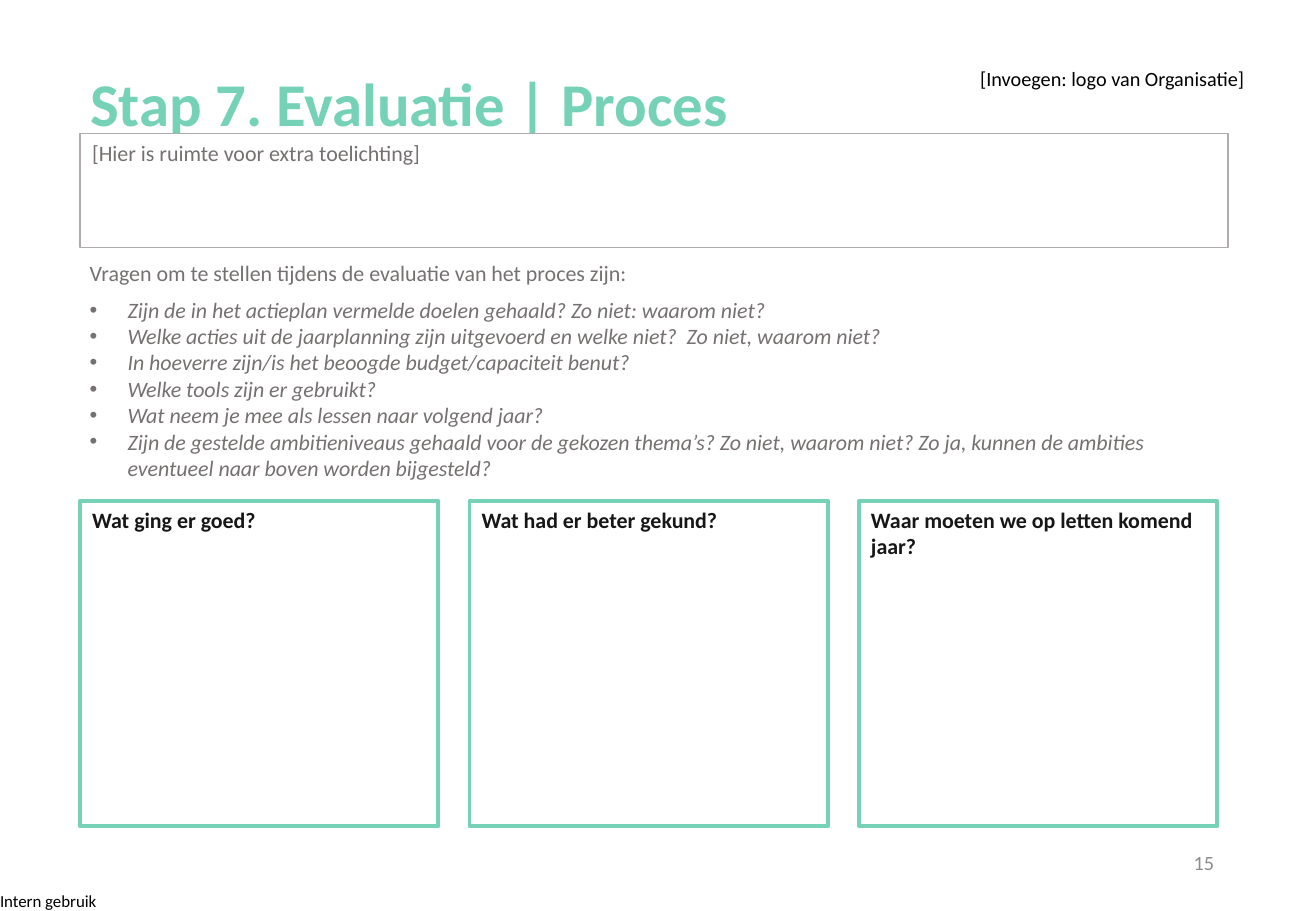
"""Build the process evaluation slide."""
import dataclasses

import lxml.etree
import pptx
import pptx.dml.color
import pptx.enum.shapes
import pptx.enum.text
import pptx.util

Pt = pptx.util.Pt
Align = pptx.enum.text.PP_ALIGN
Anchor = pptx.enum.text.MSO_ANCHOR


@dataclasses.dataclass(frozen=True)
class Theme:
    """Colours, font and type sizes of the slide."""
    font: str = "Calibri"
    mint: str = "76D2B6"
    ink: str = "181717"
    grey: str = "767171"
    rule: str = "AFABAB"
    page_grey: str = "8C8C8C"
    black: str = "000000"
    white: str = "FFFFFF"
    title: float = 36
    body: float = 13
    small: float = 12
    footer: float = 10


THEME = Theme()
QUESTIONS = [
    "Zijn de in het actieplan vermelde doelen gehaald? Zo niet: waarom niet?",
    "Welke acties uit de jaarplanning zijn uitgevoerd en welke niet?  Zo niet, waarom niet?",
    "In hoeverre zijn/is het beoogde budget/capaciteit benut?",
    "Welke tools zijn er gebruikt?",
    "Wat neem je mee als lessen naar volgend jaar?",
    "Zijn de gestelde ambitieniveaus gehaald voor de gekozen thema’s? Zo niet, waarom niet? "
    "Zo ja, kunnen de ambities eventueel naar boven worden bijgesteld?",
]
REFLECTIONS = [
    "Wat ging er goed?",
    "Wat had er beter gekund?",
    "Waar moeten we op letten komend jaar?",
]


def apply(target, formats):
    """Set every attribute in formats on target."""
    for name, value in formats.items():
        setattr(target, name, value)


def rgb(colour):
    """Return the colour object for a hex value."""
    return pptx.dml.color.RGBColor.from_string(colour)


def write(paragraph, words, size, colour, bold=False, italic=False, **formats):
    """Write one run in a paragraph and format both."""
    apply(paragraph, {"alignment": Align.LEFT, **formats})
    run = paragraph.add_run()
    run.text = words
    apply(run.font, {"name": THEME.font, "size": Pt(size), "bold": bold, "italic": italic})
    run.font.color.rgb = rgb(colour)


def add_label(slide, box, **frame_formats):
    """Add a text box and return its text frame."""
    frame = slide.shapes.add_textbox(*map(Pt, box)).text_frame
    apply(frame, {"word_wrap": True, **frame_formats})
    return frame


def add_panel(slide, box, fill=None, line=None, weight=1, anchor=Anchor.TOP):
    """Add a rectangle and return its text frame."""
    panel = slide.shapes.add_shape(
        pptx.enum.shapes.MSO_SHAPE.RECTANGLE, *map(Pt, box))
    panel.shadow.inherit = False
    if fill:
        panel.fill.solid()
        panel.fill.fore_color.rgb = rgb(fill)
    else:
        panel.fill.background()
    if line:
        panel.line.color.rgb = rgb(line)
        panel.line.width = Pt(weight)
    else:
        panel.line.fill.background()
    apply(panel.text_frame, {"word_wrap": True, "vertical_anchor": anchor})
    return panel.text_frame


def add_bullet(paragraph, indent):
    """Give a paragraph a hanging round bullet."""
    properties = paragraph._p.get_or_add_pPr()
    properties.set("marL", str(Pt(indent)))
    properties.set("indent", str(-Pt(indent)))
    namespace = properties.nsmap["a"]
    font = lxml.etree.SubElement(properties, f"{{{namespace}}}buFont")
    font.set("typeface", "Arial")
    bullet = lxml.etree.SubElement(properties, f"{{{namespace}}}buChar")
    bullet.set("char", "•")


def add_reflections(slide, box, gap):
    """Place the reflection panels in equal columns."""
    left, top, width, height = box
    column = (width - gap * (len(REFLECTIONS) - 1)) / len(REFLECTIONS)
    for index, heading in enumerate(REFLECTIONS):
        frame = add_panel(slide, (left + index * (column + gap), top, column, height),
                          line=THEME.mint, weight=2.25)
        write(frame.paragraphs[0], heading, THEME.body, THEME.ink, bold=True)


def add_header(slide, box):
    """Place the title and the page number's counterpart text at the top."""
    left, top, width, height = box
    title = add_label(slide, box, vertical_anchor=Anchor.BOTTOM, margin_left=Pt(6),
                      margin_right=Pt(6), margin_top=Pt(3), margin_bottom=Pt(3))
    write(title.paragraphs[0], "Stap 7. Evaluatie | Proces", THEME.title, THEME.mint,
          bold=True, line_spacing=0.9)
    logo_space = add_panel(slide, (left + width - 202.5, top + 7.2, 175.7, 51),
                           fill=THEME.white, anchor=Anchor.MIDDLE)
    write(logo_space.paragraphs[0], "[Invoegen: logo van Organisatie]",
          THEME.small, THEME.black, alignment=Align.CENTER)


def add_explanation(slide, box):
    """Place the framed space for extra explanation."""
    frame = add_panel(slide, box, fill=THEME.white, line=THEME.rule)
    write(frame.paragraphs[0], "[Hier is ruimte voor extra toelichting]",
          THEME.body, THEME.grey)


def add_questions(slide, box):
    """Place the introduction and the bulleted questions."""
    frame = add_label(slide, box)
    write(frame.paragraphs[0],
          "Vragen om te stellen tijdens de evaluatie van het proces zijn:",
          THEME.body, THEME.grey, space_after=Pt(6))
    for question in QUESTIONS:
        paragraph = frame.add_paragraph()
        write(paragraph, question, THEME.body, THEME.grey, italic=True)
        add_bullet(paragraph, 22.5)


def add_footer(slide, box):
    """Place the classification and the page number at the bottom."""
    left, top, width, height = box
    classification = add_label(slide, (left, top + height - 12.2, 60, 12.2),
                               word_wrap=False, margin_left=0, margin_right=0,
                               margin_top=0, margin_bottom=0)
    write(classification.paragraphs[0], "Intern gebruik", THEME.footer, THEME.black)
    page_number = add_label(slide, (left + width - 229, top, 175.7, 28.8),
                            vertical_anchor=Anchor.MIDDLE)
    write(page_number.paragraphs[0], "15", THEME.small, THEME.page_grey,
          alignment=Align.RIGHT)


def main():
    """Compose the slide and save it."""
    deck = pptx.Presentation()
    apply(deck, {"slide_width": Pt(780), "slide_height": Pt(540)})
    slide = deck.slides.add_slide(deck.slide_layouts[6])
    add_reflections(slide, (47.5, 296.8, 674, 193), gap=18.5)
    add_header(slide, (47.5, 13.7, 726.5, 72))
    add_explanation(slide, (47.5, 79.2, 680.4, 67.5))
    add_questions(slide, (46, 150.5, 680.4, 154.8))
    add_footer(slide, (0, 497, 780, 43))
    deck.save("out.pptx")


if __name__ == "__main__":
    main()
